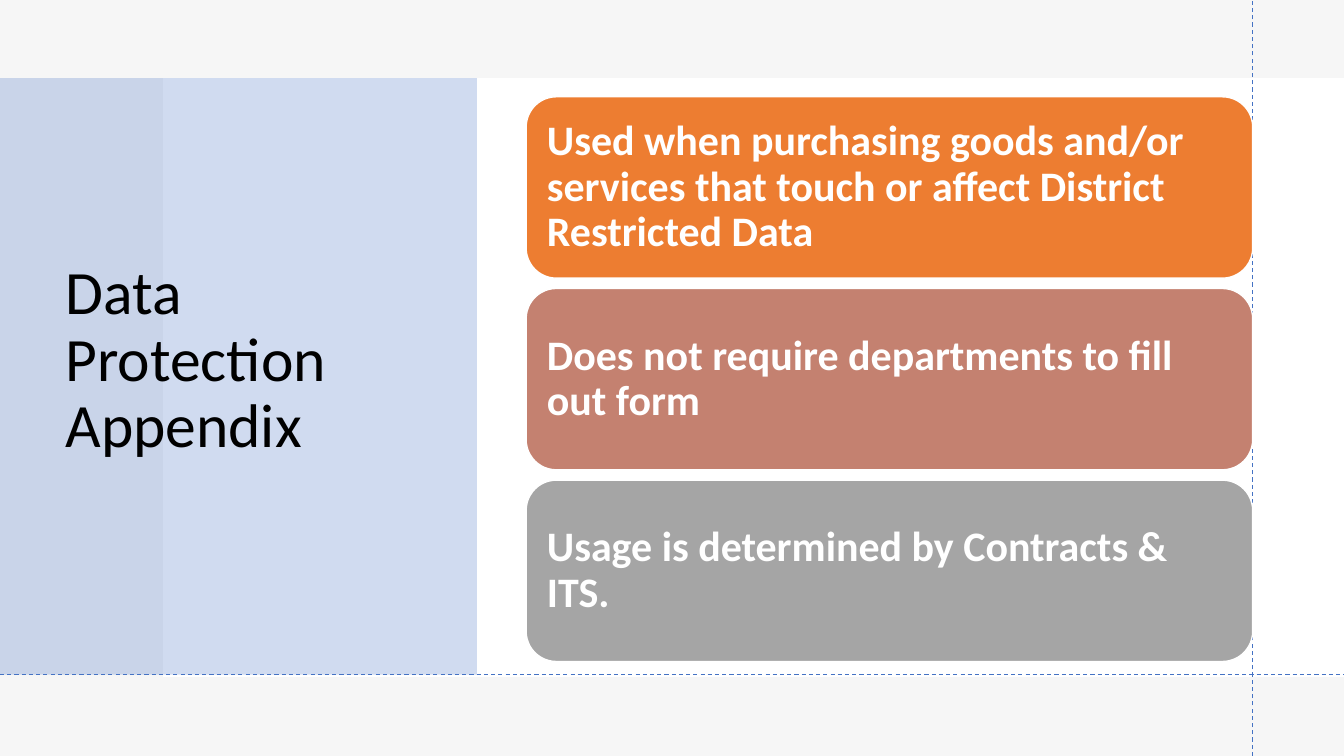
from lxml import etree
from pptx import Presentation
from pptx.dml.color import RGBColor
from pptx.enum.dml import MSO_LINE
from pptx.enum.shapes import MSO_CONNECTOR, MSO_SHAPE
from pptx.enum.text import MSO_ANCHOR, PP_ALIGN
from pptx.oxml.ns import qn
from pptx.util import Cm, Pt

RECTANGLE = MSO_SHAPE.RECTANGLE
ROUNDED = MSO_SHAPE.ROUNDED_RECTANGLE
STRAIGHT = MSO_CONNECTOR.STRAIGHT
DASH = MSO_LINE.DASH
MIDDLE = MSO_ANCHOR.MIDDLE
LEFT = PP_ALIGN.LEFT

PAGE_WIDTH, PAGE_HEIGHT = 33.87, 19.05
FONT = "Calibri"
WHITE, BLACK, GREY, BLUE = "FFFFFF", "000000", "E7E6E6", "4472C4"

CARD_LEFT, CARD_TOP = 13.26, 2.44
CARD_WIDTH, CARD_HEIGHT, CARD_PITCH = 18.31, 4.57, 4.83
CARDS = [
    ("Used when purchasing goods and/or services that touch or affect "
     "District Restricted Data", "ED7D31"),
    ("Does not require departments to fill out form", "C48170"),
    ("Usage is determined by Contracts & ITS.", "A5A5A5"),
]


def paint(color_format, color):
    color_format.rgb = RGBColor.from_string(color)


def add_block(page, left, top, width, height, color, kind=RECTANGLE, opacity=100):
    """Add a filled shape without outline; opacity is in percent."""
    block = page.shapes.add_shape(kind, Cm(left), Cm(top), Cm(width), Cm(height))
    block.shadow.inherit = False
    block.fill.solid()
    paint(block.fill.fore_color, color)
    block.line.fill.background()
    if opacity < 100:
        color_node = block.fill._xPr.find(qn("a:solidFill"))[0]
        etree.SubElement(color_node, qn("a:alpha"), val=str(opacity * 1000))
    return block


def write_text(box, text, size, color, bold=False, inset=None):
    frame = box.text_frame
    frame.word_wrap = True
    frame.vertical_anchor = MIDDLE
    if inset is not None:
        frame.margin_left = frame.margin_right = Cm(inset)
        frame.margin_top = frame.margin_bottom = Cm(inset)
    para = frame.paragraphs[0]
    para.alignment = LEFT
    para.line_spacing = 0.9
    span = para.add_run()
    span.text = text
    span.font.name = FONT
    span.font.size = Pt(size)
    span.font.bold = bold
    paint(span.font.color, color)


def add_guide(page, start_x, start_y, end_x, end_y):
    guide = page.shapes.add_connector(
        STRAIGHT, Cm(start_x), Cm(start_y), Cm(end_x), Cm(end_y))
    paint(guide.line.color, BLUE)
    guide.line.width = Pt(0.75)
    guide.line.dash_style = DASH
    etree.SubElement(guide._element.spPr, qn("a:effectLst"))


def add_card(page, top, text, color):
    card = add_block(page, CARD_LEFT, top, CARD_WIDTH, CARD_HEIGHT, color, ROUNDED)
    paint(card.line.color, WHITE)
    card.line.width = Pt(1)
    write_text(card, text, 30, WHITE, bold=True, inset=0.3)


def main():
    deck = Presentation()
    deck.slide_width, deck.slide_height = Cm(PAGE_WIDTH), Cm(PAGE_HEIGHT)
    page = deck.slides.add_slide(deck.slide_layouts[6])

    add_block(page, 0, 0, PAGE_WIDTH, PAGE_HEIGHT, WHITE)
    add_block(page, 0, 0, PAGE_WIDTH, PAGE_HEIGHT, GREY, opacity=35)
    add_block(page, 4.11, 1.97, PAGE_WIDTH - 4.11, 15.09, WHITE)
    add_block(page, 0, 1.97, 12.02, 15.03, BLUE, opacity=25)

    title = page.shapes.add_textbox(Cm(1.4), Cm(1.88), Cm(10.03), Cm(14.45))
    write_text(title, "Data Protection Appendix", 44, BLACK)

    add_guide(page, 31.57, PAGE_HEIGHT, 31.57, 0)
    add_guide(page, 0, 16.99, PAGE_WIDTH, 16.99)

    for index, (text, color) in enumerate(CARDS):
        add_card(page, CARD_TOP + index * CARD_PITCH, text, color)

    deck.save("out.pptx")


if __name__ == "__main__":
    main()
